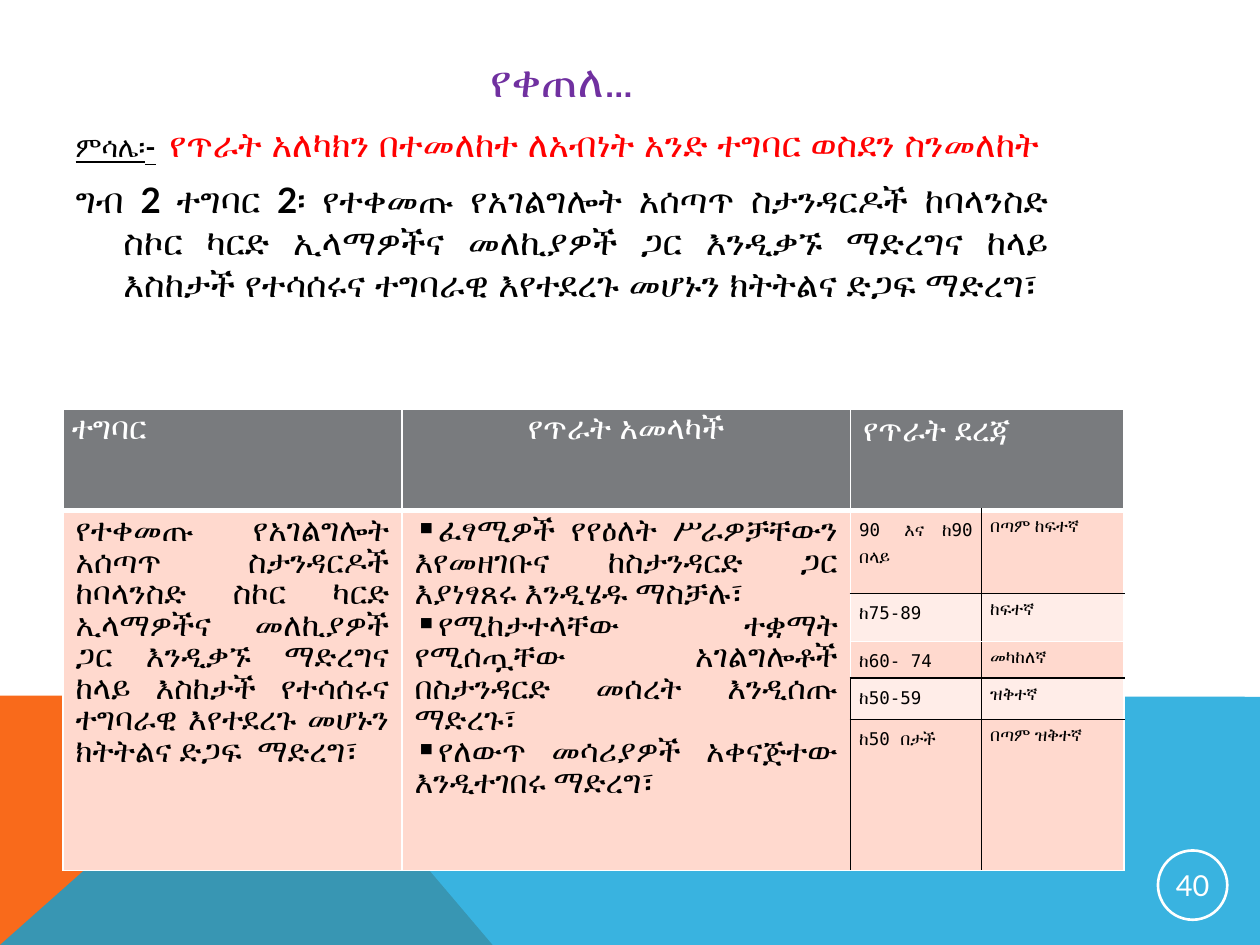
from lxml.etree import SubElement
from pptx import Presentation
from pptx.dml.color import RGBColor
from pptx.enum.shapes import MSO_SHAPE
from pptx.enum.text import MSO_ANCHOR as Anchor, PP_ALIGN as Align
from pptx.oxml.ns import qn
from pptx.util import Inches, Pt

PURPLE, RED, BLACK, WHITE = "7030A0", "FF0000", "000000", "FFFFFF"
ORANGE, BLUE, GRAY, PINK, PALE = "F96A1B", "08A1D9", "797B7E", "FFD9CE", "FFEDE8"
MONO = "DejaVu Sans Mono"


def paint(target, color):
    """Give a fill a solid colour, or a font its colour."""
    if hasattr(target, "solid"):
        target.solid()
        target.fore_color.rgb = RGBColor.from_string(color)
    else:
        target.color.rgb = RGBColor.from_string(color)


def write(para, text, color, span_format, para_format):
    """Add a formatted span and format its paragraph."""
    span = para.add_run()
    span.text = text
    for name, value in span_format.items():
        setattr(span.font, name, value)
    paint(span.font, color)
    for name, value in para_format.items():
        setattr(para, name, value)


deck = Presentation()
deck.slide_width, deck.slide_height = Inches(10), Inches(7.5)
page = deck.slides.add_slide(deck.slide_layouts[1])
title, body = page.placeholders

# Coloured bands at the foot, placed behind the text
bands = [
    (ORANGE, [(0, 7.5), (0, 5.52), (2.23, 5.52), (3.91, 7.5)]),
    (BLUE, [(0, 7.5), (2.23, 5.52), (10, 5.53), (10, 7.5)]),
]
for layer, (color, points) in enumerate(bands):
    corners = [(Inches(x), Inches(y)) for x, y in points]
    builder = page.shapes.build_freeform(*corners[0])
    builder.add_line_segments(corners[1:], close=True)
    band = builder.convert_to_shape()
    band.shadow.inherit = False
    band.line.fill.background()
    paint(band.fill, color)
    page.shapes._spTree.insert(2 + layer, band._element)
    if color == BLUE:
        color_node = band._element.spPr.find(qn("a:solidFill"))[0]
        SubElement(color_node, qn("a:alpha"), val="80000")

# Title
title.left, title.top, title.width, title.height = map(Inches, (0.5, 0.35, 7.92, 0.57))
title.text_frame.vertical_anchor = Anchor.MIDDLE
write(title.text_frame.paragraphs[0], "የቀጠለ…", PURPLE,
      {"name": "Lato", "size": Pt(25.2)}, {"alignment": Align.CENTER})

# Example text
body.left, body.top, body.width, body.height = map(Inches, (0.5, 0.92, 7.92, 6.14))
example = [
    [("ምሳሌ፡-", BLACK, 16, True),
     ("  ", BLACK, 16, False),
     ("የጥራት አለካክን በተመለከተ ለአብነት አንድ ተግባር ወስደን ስንመለከት", RED, 20, False)],
    [("ግብ 2 ተግባር 2፡ የተቀመጡ የአገልግሎት አሰጣጥ ስታንዳርዶች ከባላንስድ ስኮር ካርድ ኢላማዎችና "
      "መለኪያዎች ጋር እንዲቃኙ ማድረግና ከላይ እስከታች የተሳሰሩና ተግባራዊ እየተደረጉ መሆኑን "
      "ክትትልና ድጋፍ ማድረግ፣", BLACK, 20, False)],
]
frame = body.text_frame
for index, spans in enumerate(example):
    para = frame.add_paragraph() if index else frame.paragraphs[0]
    for text, color, size, underline in spans:
        write(para, text, color,
              {"name": "Lato", "size": Pt(size), "bold": True, "underline": underline},
              {"alignment": Align.JUSTIFY, "space_before": Pt(8)})
    props = para._p.get_or_add_pPr()
    props.set("marL", str(Inches(0.38)))
    props.set("indent", str(Inches(-0.38)))
    SubElement(props, qn("a:buNone"))

# Page number in a ring
ring = page.shapes.add_shape(MSO_SHAPE.OVAL, *map(Inches, (9.19, 6.75, 0.55, 0.55)))
ring.shadow.inherit = False
ring.fill.background()
paint(ring.line.fill, WHITE)
ring.line.width = Pt(1.5)
frame = ring.text_frame
frame.vertical_anchor = Anchor.MIDDLE
for side in ("left", "right", "top", "bottom"):
    setattr(frame, f"margin_{side}", Inches(0.01))
write(frame.paragraphs[0], "40", WHITE,
      {"name": "Lato", "size": Pt(16.5)}, {"alignment": Align.CENTER})

# Table grid
widths = [2.69, 3.56, 1.04, 1.13]
heights = [0.8, 0.66, 0.38, 0.29, 0.33, 1.2]
table = page.shapes.add_table(len(heights), len(widths),
                              *map(Inches, (0.5, 3.25, 8.42, 3.67))).table
for column, width in zip(table.columns, widths):
    column.width = Inches(width)
for row, height in zip(table.rows, heights):
    row.height = Inches(height)
table.cell(0, 2).merge(table.cell(0, 3))
for c in (0, 1):
    table.cell(1, c).merge(table.cell(5, c))

# Borders and fills: row_rules and column_rules hold the black inner lines
row_rules = {(r, c) for r in (2, 4, 5) for c in (2, 3)}
column_rules = {(r, 3) for r in range(1, 6)} | {(4, 2), (5, 2)}
for r in range(6):
    for c in range(4):
        cell = table.cell(r, c)
        edges = {
            "lnL": ((r, c) in column_rules, 1),
            "lnR": ((r, c + 1) in column_rules, 1),
            "lnT": ((r, c) in row_rules, 3 if r == 1 else 1),
            "lnB": ((r + 1, c) in row_rules, 3 if r == 0 else 1),
        }
        props = cell._tc.get_or_add_tcPr()
        for tag, (dark, weight) in edges.items():
            line = SubElement(props, qn(f"a:{tag}"), w=str(Pt(weight)))
            fill = SubElement(line, qn("a:solidFill"))
            SubElement(fill, qn("a:srgbClr"), val=BLACK if dark else WHITE)
        paint(cell.fill, GRAY if r == 0 else PALE if c > 1 and r in (2, 4) else PINK)

# Header row and rating grid
tight = {"margin_left": Inches(0.07), "margin_right": Inches(0.07),
         "margin_top": 0, "margin_bottom": 0}
header = {"name": MONO, "size": Pt(18), "bold": True}
rating = {"name": MONO, "size": Pt(10), "bold": False}
rating_para = {"alignment": Align.JUSTIFY, "line_spacing": 1.5}
entries = [
    (0, 0, "ተግባር", WHITE, header, {"alignment": Align.JUSTIFY, "line_spacing": 1.15}, tight),
    (0, 1, "የጥራት አመላካች", WHITE, header, {"alignment": Align.CENTER, "line_spacing": 1.15}, tight),
    (0, 2, "የጥራት ደረጃ", WHITE, header, {}, {}),
]
ratings = [
    ("90 እና ከ90 በላይ ", "በጣም ከፍተኛ"),
    ("ከ75-89", "ከፍተኛ"),
    ("ከ60- 74", "መካከለኛ"),
    ("ከ50-59", "ዝቅተኛ"),
    ("ከ50 በታች", "በጣም ዝቅተኛ"),
]
for r, pair in enumerate(ratings, 1):
    for c, text in enumerate(pair, 2):
        entries.append((r, c, text, BLACK, rating, rating_para, tight))
for r, c, text, color, span_format, para_format, margins in entries:
    cell = table.cell(r, c)
    for name, value in margins.items():
        setattr(cell, name, value)
    write(cell.text_frame.paragraphs[0], text, color, span_format, para_format)

# Activity and its quality measures
activity = ("የተቀመጡ የአገልግሎት አሰጣጥ  ስታንዳርዶች ከባላንስድ ስኮር ካርድ ኢላማዎችና መለኪያዎች ጋር "
            "እንዲቃኙ ማድረግና ከላይ እስከታች የተሳሰሩና ተግባራዊ እየተደረጉ መሆኑን ክትትልና ድጋፍ  ማድረግ፣")
measures = [
    "ፈፃሚዎች የየዕለት ሥራዎቻቸውን እየመዘገቡና ከስታንዳርድ ጋር እያነፃጸሩ እንዲሄዱ ማስቻሉ፣",
    "የሚከታተላቸው ተቋማት የሚሰጧቸው አገልግሎቶች በስታንዳርድ መሰረት እንዲሰጡ ማድረጉ፣",
    "የለውጥ መሳሪያዎች አቀናጅተው እንዲተገበሩ ማድረግ፣ ",
]
for c, texts in enumerate([[activity], measures]):
    frame = table.cell(1, c).text_frame
    for index, text in enumerate(texts):
        para = frame.add_paragraph() if index else frame.paragraphs[0]
        write(para, text, BLACK, {"name": "Cabin", "size": Pt(18), "bold": False},
              {"alignment": Align.JUSTIFY})
        if texts is measures:
            SubElement(para._p.get_or_add_pPr(), qn("a:buChar"), char="▪")

deck.save("out.pptx")
